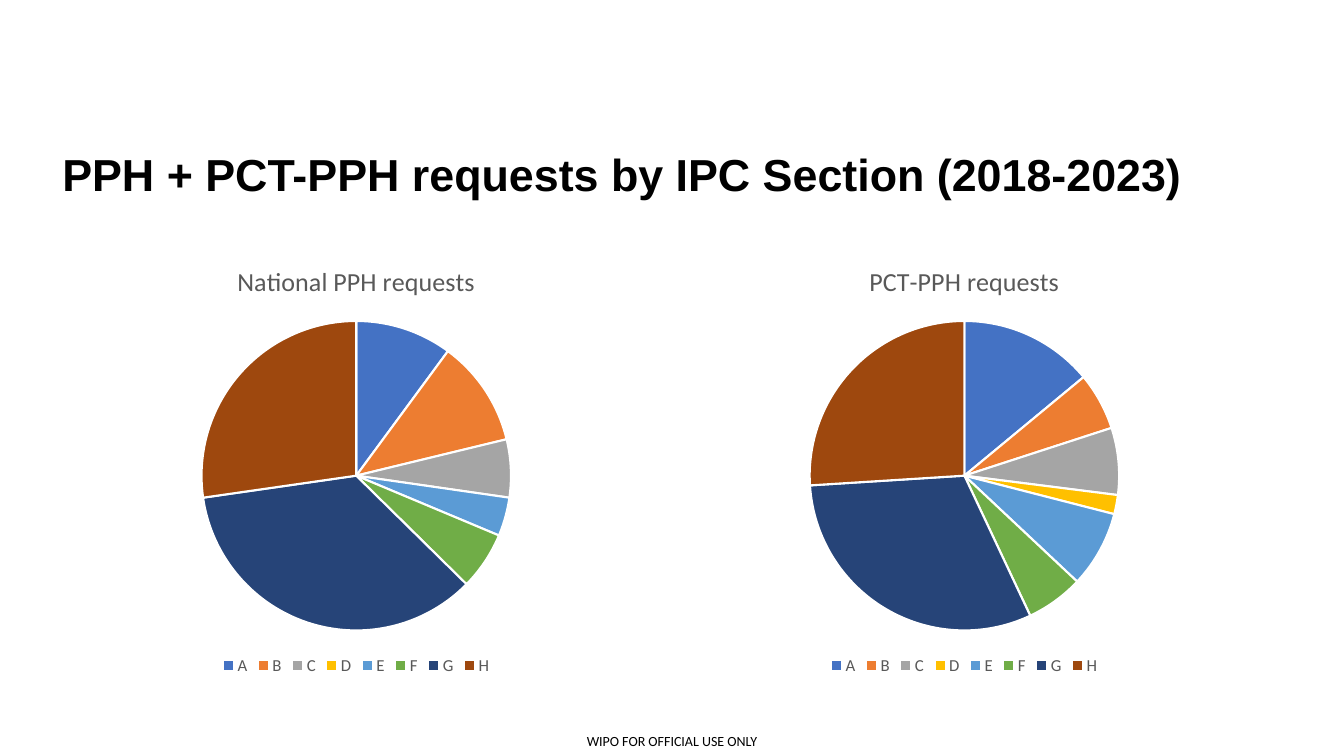
import pptx
import pptx.chart.data
import pptx.dml.color
import pptx.enum.chart
import pptx.enum.text
import pptx.oxml
import pptx.oxml.ns
import pptx.util
from pptx.util import Cm

# Content
TITLE = "PPH + PCT-PPH requests by IPC Section (2018-2023)"
FOOTER = "WIPO FOR OFFICIAL USE ONLY"
SECTIONS = list("ABCDEFGH")
SECTION_COLORS = ["4472C4", "ED7D31", "A5A5A5", "FFC000",
                  "5B9BD5", "70AD47", "264478", "9E480E"]
CHARTS = [  # name, left and width in cm, percentages
    ("National PPH requests", 1.32, 15.32, (10, 11, 6, 0, 4, 6, 35, 27)),
    ("PCT-PPH requests", 17.22, 14.17, (14, 6, 7, 2, 8, 6, 31, 26)),
]
CHART_TOP, CHART_HEIGHT = 6.15, 10.97
PIE_TOP, PIE_DIAMETER = 1.94, 7.8
GREY = "595959"


def color(hex_text):
    return pptx.dml.color.RGBColor.from_string(hex_text)


def style_font(font, name, size, hex_text, bold=False):
    font.name = name
    font.size = pptx.util.Pt(size)
    font.bold = bold
    font.color.rgb = color(hex_text)


def add_text(slide, text, left, top, width, height, *, name, size,
             align, inset=(0, 0), spacing=1.0, bold=False):
    shape = slide.shapes.add_textbox(Cm(left), Cm(top), Cm(width), Cm(height))
    frame = shape.text_frame
    frame.word_wrap = True
    frame.vertical_anchor = pptx.enum.text.MSO_ANCHOR.MIDDLE
    frame.margin_left = frame.margin_right = Cm(inset[0])
    frame.margin_top = frame.margin_bottom = Cm(inset[1])
    paragraph = frame.paragraphs[0]
    paragraph.alignment = align
    paragraph.line_spacing = spacing
    run = paragraph.add_run()
    run.text = text
    style_font(run.font, name, size, "000000", bold)


def place_pie(chart, width):
    """Centre a round plot area of fixed diameter in the chart."""
    places = {"x": (width - PIE_DIAMETER) / 2 / width,
              "y": PIE_TOP / CHART_HEIGHT,
              "w": PIE_DIAMETER / width,
              "h": PIE_DIAMETER / CHART_HEIGHT}
    modes = '<c:xMode val="edge"/><c:yMode val="edge"/>'
    values = "".join(f'<c:{key} val="{value:.4f}"/>' for key, value in places.items())
    layout = pptx.oxml.parse_xml(
        f'<c:layout {pptx.oxml.ns.nsdecls("c")}><c:manualLayout>'
        f'<c:layoutTarget val="inner"/>{modes}{values}</c:manualLayout></c:layout>')
    plot_area = chart._chartSpace.chart.plotArea
    for old_layout in plot_area.findall(pptx.oxml.ns.qn("c:layout")):
        plot_area.remove(old_layout)
    plot_area.insert(0, layout)


def add_pie(slide, name, left, width, percentages):
    data = pptx.chart.data.CategoryChartData()
    data.categories = SECTIONS
    data.add_series(name, percentages)
    chart = slide.shapes.add_chart(
        pptx.enum.chart.XL_CHART_TYPE.PIE, Cm(left), Cm(CHART_TOP),
        Cm(width), Cm(CHART_HEIGHT), data).chart
    style_font(chart.font, "Calibri", 10, "000000")

    # Title and legend
    chart.has_title = True
    chart.chart_title.include_in_layout = False
    paragraph = chart.chart_title.text_frame.paragraphs[0]
    run = paragraph.add_run()
    run.text = name
    style_font(run.font, "Calibri", 18.6, GREY)
    chart.has_legend = True
    chart.legend.position = pptx.enum.chart.XL_LEGEND_POSITION.BOTTOM
    chart.legend.include_in_layout = False
    style_font(chart.legend.font, "Calibri", 12, GREY)

    # Slices
    plot = chart.plots[0]
    plot.vary_by_categories = True
    for index, hex_text in enumerate(SECTION_COLORS):
        slice_format = plot.series[0].points[index].format
        slice_format.fill.solid()
        slice_format.fill.fore_color.rgb = color(hex_text)
        slice_format.line.color.rgb = color("FFFFFF")
        slice_format.line.width = pptx.util.Pt(1.5)
    place_pie(chart, width)


def main():
    presentation = pptx.Presentation()
    presentation.slide_width = Cm(33.87)
    presentation.slide_height = Cm(19.05)
    slide = presentation.slides.add_slide(presentation.slide_layouts[6])

    alignment = pptx.enum.text.PP_ALIGN
    add_text(slide, FOOTER, 14.33, 18.31, 5.21, 0.74,
             name="Calibri", size=10, align=alignment.CENTER)
    add_text(slide, TITLE, 1.32, 3.56, 31.04, 1.78, name="Arial", size=32,
             align=alignment.LEFT, inset=(0.25, 0.13), spacing=0.9, bold=True)
    for name, left, width, percentages in CHARTS:
        add_pie(slide, name, left, width, percentages)

    presentation.save("out.pptx")


if __name__ == "__main__":
    main()
